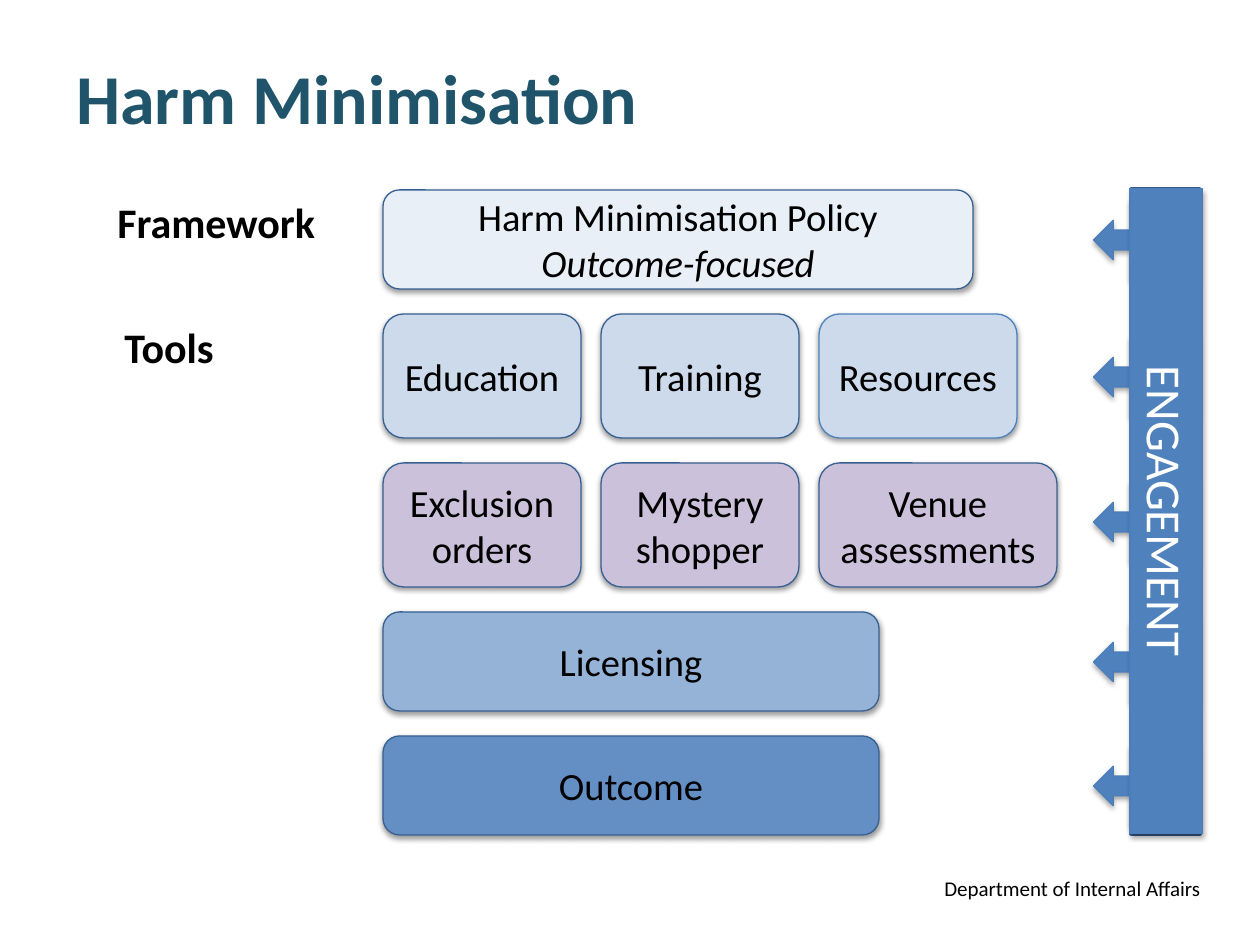
from dataclasses import dataclass

from lxml import etree
from pptx import Presentation
from pptx.dml.color import RGBColor
from pptx.enum.shapes import MSO_SHAPE
from pptx.enum.text import MSO_ANCHOR, PP_ALIGN
from pptx.oxml.ns import qn
from pptx.util import Emu, Pt

ROUNDED = MSO_SHAPE.ROUNDED_RECTANGLE
RECTANGLE = MSO_SHAPE.RECTANGLE
ARROW_CALLOUT = MSO_SHAPE.DOWN_ARROW_CALLOUT
TOP, MIDDLE = MSO_ANCHOR.TOP, MSO_ANCHOR.MIDDLE
LEFT, CENTER, RIGHT = PP_ALIGN.LEFT, PP_ALIGN.CENTER, PP_ALIGN.RIGHT

PX_PER_INCH = 126
SLIDE_WIDTH, SLIDE_HEIGHT = 1260, 945


@dataclass(frozen=True)
class Theme:
    font: str = "Calibri"
    title: str = "1F546B"
    text: str = "000000"
    bar_text: str = "FFFFFF"
    shadow: str = "000000"
    policy: str = "E9EFF7"
    support: str = "CCDAEC"
    control: str = "CCC1DA"
    licensing: str = "95B3D7"
    outcome: str = "648FC4"
    box_line: str = "376092"
    engagement: str = "4F81BD"
    engagement_line: str = "4B7EBC"
    backing_line: str = "3A5F8C"
    title_size: int = 40
    bar_size: int = 28
    label_size: int = 24
    box_size: int = 22
    footer_size: int = 12


THEME = Theme()

BOX_LEFT, COLUMN_WIDTH, COLUMN_GAP = 383, 198, 20
FIRST_ROW_TOP, ROW_GAP = 190, 25
# Each row: height, fill, and boxes as (lines, width).
ROWS = [
    (99, THEME.policy, [(["Harm Minimisation Policy", "Outcome-focused"], 590)]),
    (124, THEME.support, [(["Education"], COLUMN_WIDTH), (["Training"], COLUMN_WIDTH),
                          (["Resources"], COLUMN_WIDTH)]),
    (124, THEME.control, [(["Exclusion orders"], COLUMN_WIDTH),
                          (["Mystery shopper"], COLUMN_WIDTH),
                          (["Venue assessments"], 238)]),
    (99, THEME.licensing, [(["Licensing"], 496)]),
    (99, THEME.outcome, [(["Outcome"], 496)]),
]
LINE_OVERRIDES = {"Resources": THEME.engagement}
ITALIC_LINES = {"Outcome-focused"}
ARROW_CENTERS = [240, 377, 522, 662, 786]


def px(length):
    return Emu(round(length * 914400 / PX_PER_INCH))


def write(shape, lines, size, color=THEME.text, bold=False, align=LEFT,
          anchor=TOP, wrap=True):
    frame = shape.text_frame
    frame.word_wrap = wrap
    frame.vertical_anchor = anchor
    for index, line in enumerate(lines):
        paragraph = frame.paragraphs[0] if index == 0 else frame.add_paragraph()
        paragraph.alignment = align
        run = paragraph.add_run()
        run.text = line
        font_format = {"name": THEME.font, "size": Pt(size), "bold": bold,
                       "italic": line in ITALIC_LINES}
        for name, value in font_format.items():
            setattr(run.font, name, value)
        run.font.color.rgb = RGBColor.from_string(color)


def add_label(slide, bounds, line, size, **text_format):
    label = slide.shapes.add_textbox(*map(px, bounds))
    write(label, [line], size, **text_format)


def add_shadow(shape, opacity, distance):
    """Cast a soft shadow straight down, whatever the shape's rotation."""
    effects = shape._element.spPr.find(qn("a:effectLst"))
    shadow = etree.SubElement(
        effects, qn("a:outerShdw"), blurRad=str(Pt(3.1)), dist=str(Pt(distance)),
        dir="5400000", rotWithShape="0")
    color = etree.SubElement(shadow, qn("a:srgbClr"), val=THEME.shadow)
    etree.SubElement(color, qn("a:alpha"), val=str(opacity * 1000))


def add_block(slide, kind, bounds, fill, line, line_width=0.75, rotation=0):
    block = slide.shapes.add_shape(kind, *map(px, bounds))
    block.shadow.inherit = False
    block.rotation = rotation
    block.fill.solid()
    block.fill.fore_color.rgb = RGBColor.from_string(fill)
    block.line.color.rgb = RGBColor.from_string(line)
    block.line.width = Pt(line_width)
    return block


def add_engagement_block(slide, kind, center_x, center_y, width, height):
    """Add a shadowed block turned a quarter clockwise about its centre."""
    bounds = (center_x - width / 2, center_y - height / 2, width, height)
    block = add_block(slide, kind, bounds, THEME.engagement,
                      THEME.engagement_line, rotation=90)
    add_shadow(block, 35, 1.8)
    return block


def add_engagement(slide):
    for center_y in ARROW_CENTERS:
        add_engagement_block(slide, ARROW_CALLOUT, 1146, center_y, 79, 105)
    add_block(slide, RECTANGLE, (1131, 189, 69, 645), THEME.engagement,
              THEME.backing_line, line_width=2)
    bar = add_engagement_block(slide, RECTANGLE, 1166, 511, 645, 72)
    write(bar, ["ENGAGEMENT"], THEME.bar_size, color=THEME.bar_text, align=CENTER)


def add_rows(slide):
    top = FIRST_ROW_TOP
    for height, fill, boxes in ROWS:
        for column, (lines, width) in enumerate(boxes):
            left = BOX_LEFT + column * (COLUMN_WIDTH + COLUMN_GAP)
            line = LINE_OVERRIDES.get(lines[0], THEME.box_line)
            box = add_block(slide, ROUNDED, (left, top, width, height), fill, line)
            add_shadow(box, 38, 1.6)
            write(box, lines, THEME.box_size, align=CENTER, anchor=MIDDLE)
        top += height + ROW_GAP


def main():
    presentation = Presentation()
    presentation.slide_width = px(SLIDE_WIDTH)
    presentation.slide_height = px(SLIDE_HEIGHT)
    slide = presentation.slides.add_slide(presentation.slide_layouts[6])

    add_label(slide, (796, 869, 417, 50), "Department of Internal Affairs",
              THEME.footer_size, align=RIGHT)
    add_engagement(slide)
    add_rows(slide)
    add_label(slide, (105, 190, 224, 63), "Framework", THEME.label_size,
              bold=True, wrap=False)
    add_label(slide, (112, 315, 116, 63), "Tools", THEME.label_size,
              bold=True, wrap=False)
    add_label(slide, (64, 37, 1134, 118), "Harm Minimisation", THEME.title_size,
              color=THEME.title, bold=True, anchor=MIDDLE)
    presentation.save("out.pptx")


if __name__ == "__main__":
    main()
